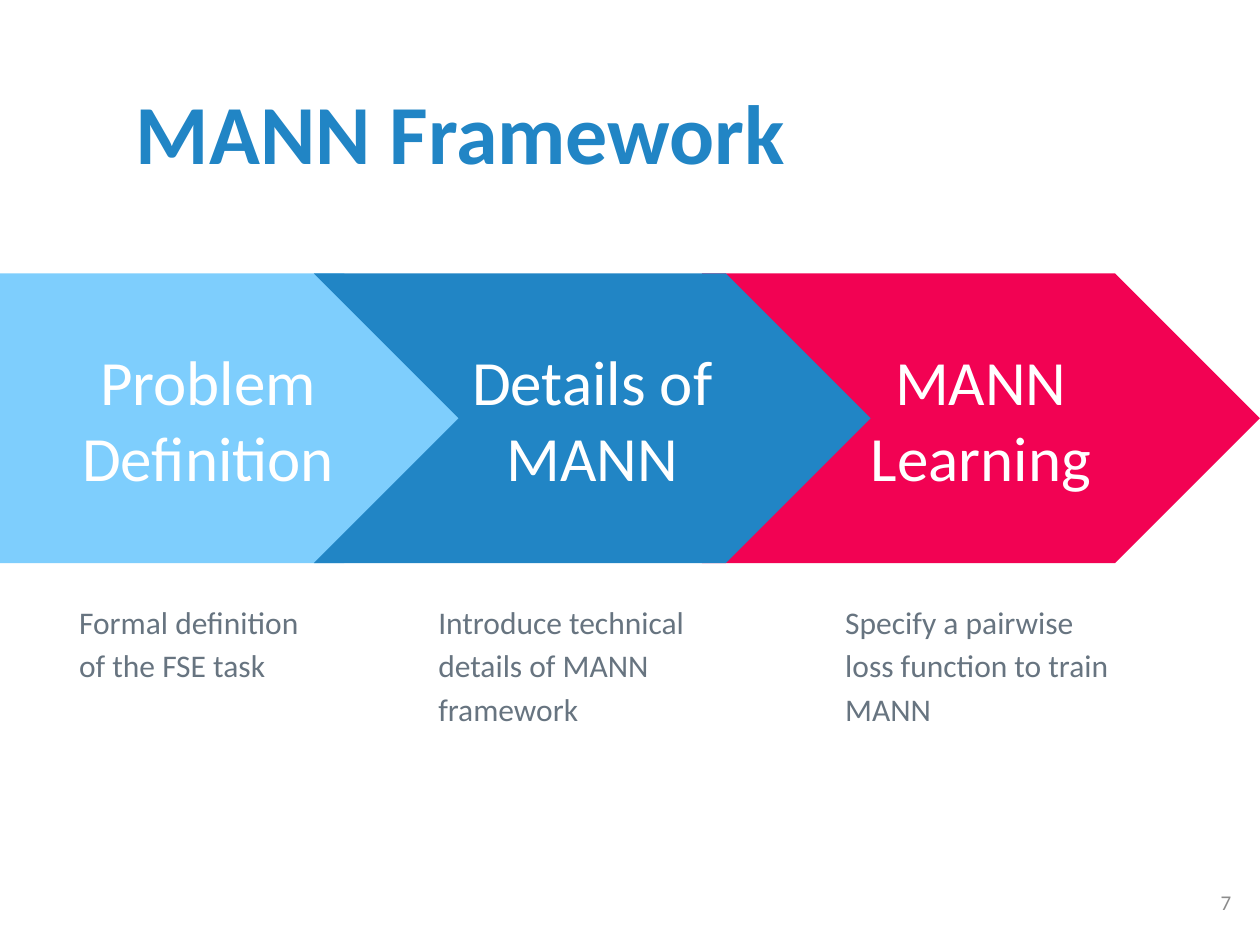
from pptx import Presentation
from pptx.dml.color import RGBColor
from pptx.enum.shapes import MSO_SHAPE
from pptx.enum.text import MSO_ANCHOR, PP_ALIGN
from pptx.util import Inches, Pt

COLORS = {
    "sky": "7ECEFD", "blue": "2185C5", "red": "F20253",
    "white": "FFFFFF", "slate": "677480", "gray": "8C8C8C",
}
WIDTH, HEIGHT = Inches(10), Inches(7.5)
COL, ROW = WIDTH / 100, HEIGHT / 75
BAND_TOP, BAND_ROWS = 21.7, 23
NOTE_TOP = 46.4


def place(box):
    x, y, w, h = box
    return [round(v) for v in (x * COL, y * ROW, w * COL, h * ROW)]


def write(sp, text, size=18, color="slate", bold=False, align=PP_ALIGN.LEFT,
          anchor=MSO_ANCHOR.TOP, spacing=None):
    tf = sp.text_frame
    tf.word_wrap = True
    tf.vertical_anchor = anchor
    tf.margin_left = tf.margin_right = Inches(0.1)
    tf.margin_top = tf.margin_bottom = Inches(0.1)
    p = tf.paragraphs[0]
    p.alignment = align
    p.line_spacing = spacing
    r = p.add_run()
    r.text = text
    r.font.name = "Calibri"
    r.font.size = Pt(size)
    r.font.bold = bold
    r.font.color.rgb = RGBColor.from_string(COLORS[color])


def add_text(slide, box, text, **fmt):
    write(slide.shapes.add_textbox(*place(box)), text, **fmt)


def add_arrow(slide, box, kind, color, label):
    sp = slide.shapes.add_shape(kind, *place(box))
    sp.adjustments[0] = 0.5
    sp.shadow.inherit = False
    sp.fill.solid()
    sp.fill.fore_color.rgb = RGBColor.from_string(COLORS[color])
    sp.line.fill.background()
    write(sp, label, size=36, color="white", align=PP_ALIGN.CENTER,
          anchor=MSO_ANCHOR.MIDDLE)


def add_stage(slide, arrow_span, note_span, kind, color, label, note):
    x, w = arrow_span
    add_arrow(slide, (x, BAND_TOP, w, BAND_ROWS), kind, color, label)
    x, w = note_span
    add_text(slide, (x, NOTE_TOP, w, 25), note, spacing=1.15)


def main():
    prs = Presentation()
    prs.slide_width, prs.slide_height = WIDTH, HEIGHT
    slide = prs.slides.add_slide(prs.slide_layouts[6])

    add_text(slide, (9.8, 3, 70.7, 12.5), "MANN Framework", size=48,
             color="blue", bold=True, anchor=MSO_ANCHOR.BOTTOM, spacing=0.9)

    stages = [
        ((55.7, 44.3), (66.1, 23.5), MSO_SHAPE.CHEVRON, "red",
         "MANN Learning", "Specify a pairwise loss function to train MANN"),
        ((0, 38.8), (5.3, 21.6), MSO_SHAPE.PENTAGON, "sky",
         "Problem Definition", "Formal definition of the FSE task"),
        ((24.9, 44.2), (33.8, 25.2), MSO_SHAPE.CHEVRON, "blue",
         "Details of MANN", "Introduce technical details of MANN framework"),
    ]
    for stage in stages:
        add_stage(slide, *stage)

    add_text(slide, (92.7, 69.6, 6, 4.6), "7", size=12, color="gray",
             align=PP_ALIGN.RIGHT)
    prs.save("out.pptx")


if __name__ == "__main__":
    main()
